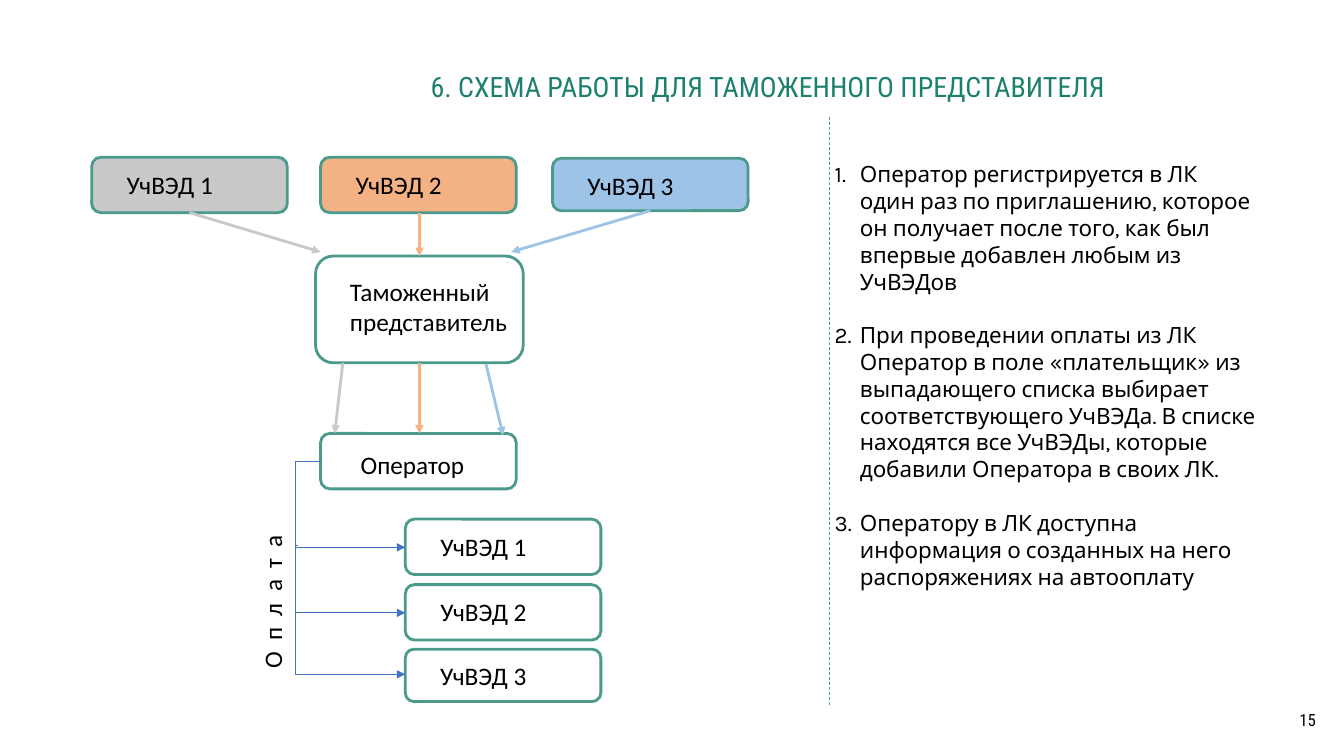
from dataclasses import dataclass

import pptx
import pptx.dml.color
import pptx.enum.dml
import pptx.enum.shapes
import pptx.enum.text
import pptx.oxml
import pptx.oxml.ns
import pptx.util
from pptx.dml.color import RGBColor
from pptx.util import Inches, Pt

BLACK = RGBColor(0x00, 0x00, 0x00)
TITLE_GREEN = RGBColor(0x1D, 0x80, 0x6E)
BORDER_GREEN = RGBColor(0x4B, 0x9A, 0x8C)
GREY = RGBColor(0xC9, 0xC9, 0xC9)
ORANGE = RGBColor(0xF4, 0xB1, 0x83)
LIGHT_BLUE = RGBColor(0x9D, 0xC3, 0xE6)
PAYMENT_BLUE = RGBColor(0x44, 0x72, 0xC4)

ANCHOR = pptx.enum.text.MSO_ANCHOR
ALIGN = pptx.enum.text.PP_ALIGN
CONNECTOR = pptx.enum.shapes.MSO_CONNECTOR
DASH = pptx.enum.dml.MSO_LINE.DASH
qn = pptx.oxml.ns.qn

LABEL_FONT = {"name": "Calibri", "size": Pt(18)}
STEP_FONT = {"name": "Karla", "size": Pt(16)}
TITLE_FONT = {"name": "Roboto Condensed", "size": Pt(20)}
NUMBER_FONT = {"name": "Roboto Condensed", "size": Pt(12)}
SPINE_X = 2.93


@dataclass
class Box:
    text: str
    left: float
    top: float
    width: float = 1.94
    height: float = 0.55
    fill: RGBColor | None = None
    inset_left: float = 0.32
    inset_top: float = 0.09


@dataclass
class Line:
    x1: float
    y1: float
    x2: float
    y2: float
    color: RGBColor
    width: float = 2
    arrow: bool = True
    dash: bool = False
    spine_x: float | None = None


BOXES = [
    Box("УчВЭД 1", 0.91, 1.56, fill=GREY),
    Box("УчВЭД 2", 3.18, 1.56, fill=ORANGE),
    Box("УчВЭД 3", 5.48, 1.57, height=0.52, fill=LIGHT_BLUE),
    Box("Таможенный представитель", 3.13, 2.54, 2.06, 1.06, inset_left=0.29, inset_top=0.15),
    Box("Оператор", 3.18, 4.3, inset_left=0.37, inset_top=0.13),
    Box("УчВЭД 1", 4.02, 5.15),
    Box("УчВЭД 2", 4.02, 5.8),
    Box("УчВЭД 3", 4.02, 6.44, height=0.52),
]

LINES = [
    Line(8.23, 1.16, 8.23, 6.99, BORDER_GREEN, 0.5, arrow=False, dash=True),
    Line(1.88, 2.11, 3.18, 2.5, GREY),
    Line(4.16, 2.11, 4.16, 2.54, ORANGE),
    Line(6.45, 2.09, 5.07, 2.5, LIGHT_BLUE),
    Line(3.4, 3.6, 3.32, 4.3, GREY),
    Line(4.16, 3.6, 4.16, 4.3, ORANGE),
    Line(4.82, 3.61, 4.99, 4.32, LIGHT_BLUE),
    Line(3.18, 4.58, 4.02, 5.43, PAYMENT_BLUE, 0.5, spine_x=SPINE_X),
    Line(2.96, 5.41, 4.02, 6.08, PAYMENT_BLUE, 0.5, spine_x=SPINE_X),
    Line(2.96, 6.08, 4.02, 6.69, PAYMENT_BLUE, 0.5, spine_x=SPINE_X),
]

STEPS = [
    "Оператор регистрируется в ЛК один раз по приглашению, которое он получает "
    "после того, как был впервые добавлен любым из УчВЭДов",
    "При проведении оплаты из ЛК Оператор в поле «плательщик» из выпадающего списка "
    "выбирает соответствующего УчВЭДа. В списке находятся все УчВЭДы, которые "
    "добавили Оператора в своих ЛК.",
    "Оператору в ЛК доступна информация о созданных на него распоряжениях на автооплату",
]


def apply(target, values: dict) -> None:
    for name, value in values.items():
        setattr(target, name, value)


def add_run(p, text: str, font: dict, color: RGBColor = BLACK):
    r = p.add_run()
    r.text = text
    apply(r.font, font)
    r.font.color.rgb = color
    return r


def add_text_box(s, left: float, top: float, width: float, height: float):
    sp = s.shapes.add_textbox(*map(Inches, (left, top, width, height)))
    sp.text_frame.word_wrap = True
    return sp


def add_box(s, box: Box) -> None:
    sp = s.shapes.add_shape(
        pptx.enum.shapes.MSO_SHAPE.ROUNDED_RECTANGLE,
        *map(Inches, (box.left, box.top, box.width, box.height)))
    sp.shadow.inherit = False
    if box.fill is None:
        sp.fill.background()
    else:
        sp.fill.solid()
        sp.fill.fore_color.rgb = box.fill
    sp.line.color.rgb = BORDER_GREEN
    sp.line.width = Pt(2)
    tf = sp.text_frame
    apply(tf, {"word_wrap": True, "vertical_anchor": ANCHOR.TOP,
               "margin_left": Inches(box.inset_left), "margin_top": Inches(box.inset_top),
               "margin_right": 0, "margin_bottom": 0})
    p = tf.paragraphs[0]
    p.alignment = ALIGN.LEFT
    add_run(p, box.text, LABEL_FONT)


def add_line(s, line: Line) -> None:
    kind = CONNECTOR.STRAIGHT if line.spine_x is None else CONNECTOR.ELBOW
    c = s.shapes.add_connector(kind, *map(Inches, (line.x1, line.y1, line.x2, line.y2)))
    c.line.color.rgb = line.color
    c.line.width = Pt(line.width)
    if line.dash:
        c.line.dash_style = DASH
    props = c.element.find(qn("p:spPr"))
    if line.arrow:
        tail = pptx.oxml.ns.nsdecls("a")
        props.find(qn("a:ln")).append(
            pptx.oxml.parse_xml(f'<a:tailEnd {tail} type="triangle"/>'))
    if line.spine_x is not None:
        bend = round((line.spine_x - line.x1) / (line.x2 - line.x1) * 100000)
        guides = props.find(qn("a:prstGeom")).find(qn("a:avLst"))
        guide = guides.makeelement(qn("a:gd"), {"name": "adj1", "fmla": f"val {bend}"})
        guides.append(guide)
    props.append(props.makeelement(qn("a:effectLst"), {}))


def add_steps(s) -> None:
    tf = add_text_box(s, 8.18, 1.54, 4.38, 4.68).text_frame
    for i, step in enumerate(STEPS):
        p = tf.add_paragraph() if i else tf.paragraphs[0]
        if i:
            p.space_before = Pt(19)
        pPr = p._p.get_or_add_pPr()
        pPr.set("marL", str(Inches(0.25)))
        pPr.set("indent", str(-Inches(0.25)))
        pPr.append(pPr.makeelement(qn("a:buFont"), {"typeface": "Karla"}))
        pPr.append(pPr.makeelement(qn("a:buAutoNum"), {"type": "arabicPeriod"}))
        add_run(p, step, STEP_FONT)


def add_title(s) -> None:
    sp = s.shapes.title
    apply(sp, {"left": Inches(4.27), "top": Inches(0.48),
               "width": Inches(8.54), "height": Inches(0.79)})
    tf = sp.text_frame
    apply(tf, {"margin_left": 0, "margin_top": 0, "margin_right": 0, "margin_bottom": 0,
               "word_wrap": True, "vertical_anchor": ANCHOR.MIDDLE,
               "auto_size": pptx.enum.text.MSO_AUTO_SIZE.NONE})
    p = tf.paragraphs[0]
    apply(p, {"alignment": ALIGN.LEFT, "line_spacing": 0.9})
    add_run(p, "6. СХЕМА РАБОТЫ ДЛЯ ТАМОЖЕННОГО ПРЕДСТАВИТЕЛЯ", TITLE_FONT, TITLE_GREEN)


def add_payment_label(s) -> None:
    sp = add_text_box(s, 1.67, 5.5, 2.06, 0.4)
    sp.rotation = 270
    r = add_run(sp.text_frame.paragraphs[0], "Оплата", LABEL_FONT)
    r._r.get_or_add_rPr().set("spc", "810")


def add_slide_number(s) -> None:
    tf = add_text_box(s, 10.15, 6.95, 3, 0.4).text_frame
    tf.vertical_anchor = ANCHOR.MIDDLE
    p = tf.paragraphs[0]
    apply(p, {"alignment": ALIGN.RIGHT, "line_spacing": 0.9})
    add_run(p, "15", NUMBER_FONT)


def main() -> None:
    prs = pptx.Presentation()
    apply(prs, {"slide_width": Inches(13.33), "slide_height": Inches(7.5)})
    s = prs.slides.add_slide(prs.slide_layouts.get_by_name("Title Only"))
    add_title(s)
    for box in BOXES:
        add_box(s, box)
    for line in LINES:
        add_line(s, line)
    add_payment_label(s)
    add_steps(s)
    add_slide_number(s)
    prs.save("out.pptx")


if __name__ == "__main__":
    main()
